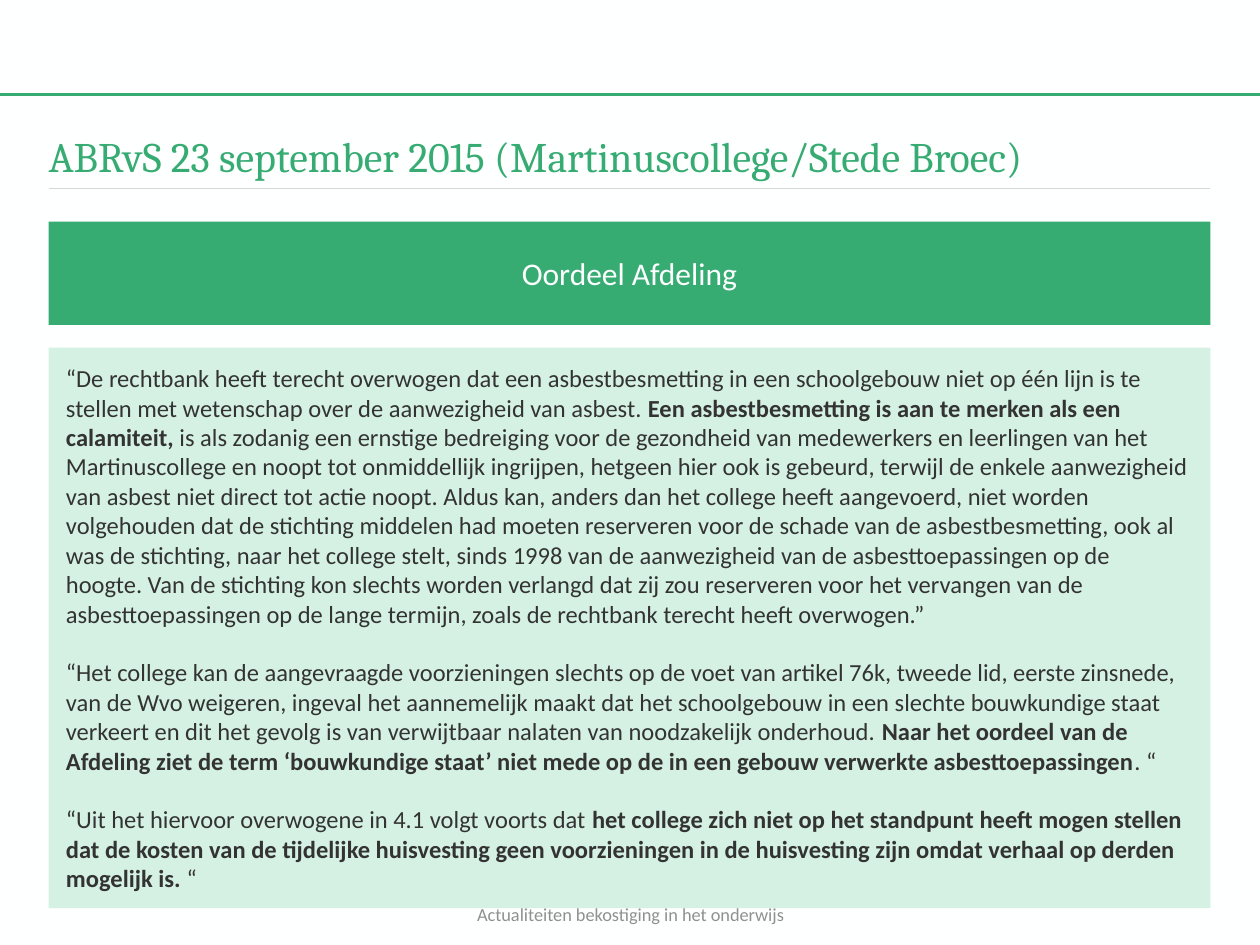
from pptx import Presentation
from pptx.dml.color import RGBColor as Rgb
from pptx.enum.shapes import MSO_CONNECTOR as Con, MSO_SHAPE as Geo
from pptx.enum.text import MSO_ANCHOR as Anc, PP_ALIGN as Al
from pptx.oxml.ns import qn
from pptx.util import Cm, Pt
from lxml.etree import SubElement as Sub

HEX = {"back": "FEFFFF", "green": "36AC73", "mint": "D4F1E3",
       "ink": "333333", "rule": "D7D5D6", "grey": "909090"}
WIDE, HIGH = 25.4, 19.05
LEFT, SPAN = 0.98, 23.42


class Deck:
    """Holds the style and the current slide."""

    def __init__(self):
        self.prs = Presentation()
        self.prs.slide_width, self.prs.slide_height = Cm(WIDE), Cm(HIGH)
        self.page = self.prs.slides.add_slide(self.prs.slide_layouts[6])
        fill = self.page.background.fill
        fill.solid()
        fill.fore_color.rgb = self.tint("back")

    def tint(self, name):
        return Rgb.from_string(HEX[name])

    def line(self, x, y, span, tone, width):
        con = self.page.shapes.add_connector(
            Con.STRAIGHT, Cm(x), Cm(y), Cm(x + span), Cm(y))
        con.line.color.rgb = self.tint(tone)
        con.line.width = Pt(width)
        Sub(con._element.spPr, qn("a:effectLst"))

    def label(self, shape, paras, size, tone, font="Calibri", align=Al.LEFT,
              anchor=Anc.MIDDLE, inset=0, lead=None):
        """Each paragraph is a list of runs; every second run is bold."""
        frame = shape.text_frame
        frame.word_wrap = True
        frame.vertical_anchor = anchor
        frame.margin_left = frame.margin_right = Cm(inset)
        frame.margin_top = frame.margin_bottom = Cm(0)
        for i, runs in enumerate(paras):
            para = frame.add_paragraph() if i else frame.paragraphs[0]
            para.alignment = align
            if lead:
                para.line_spacing = Pt(lead)
                para.space_before = Pt(lead if i else 0)
            for j, words in enumerate(runs):
                run = para.add_run()
                run.text = words
                run.font.name, run.font.size = font, Pt(size)
                run.font.bold = j % 2 == 1
                run.font.color.rgb = self.tint(tone)

    def text(self, x, y, w, h, words, size, tone, **style):
        box = self.page.shapes.add_textbox(Cm(x), Cm(y), Cm(w), Cm(h))
        self.label(box, [[words]], size, tone, **style)

    def panel(self, y, h, fill, paras, size, tone, **style):
        box = self.page.shapes.add_shape(
            Geo.RECTANGLE, Cm(LEFT), Cm(y), Cm(SPAN), Cm(h))
        box.shadow.inherit = False
        box.fill.solid()
        box.fill.fore_color.rgb = self.tint(fill)
        box.line.fill.background()
        self.label(box, paras, size, tone, **style)

    def save(self):
        self.prs.save("out.pptx")


QUOTES = [
    ["“De rechtbank heeft terecht overwogen dat een asbestbesmetting in een "
     "schoolgebouw niet op één lijn is te stellen met wetenschap over de "
     "aanwezigheid van asbest. ",
     "Een asbestbesmetting is aan te merken als een calamiteit,",
     " is als zodanig een ernstige bedreiging voor de gezondheid van "
     "medewerkers en leerlingen van het Martinuscollege en noopt tot "
     "onmiddellijk ingrijpen, hetgeen hier ook is gebeurd, terwijl de enkele "
     "aanwezigheid van asbest niet direct tot actie noopt. Aldus kan, anders "
     "dan het college heeft aangevoerd, niet worden volgehouden dat de "
     "stichting middelen had moeten reserveren voor de schade van de "
     "asbestbesmetting, ook al was de stichting, naar het college stelt, "
     "sinds 1998 van de aanwezigheid van de asbesttoepassingen op de hoogte. "
     "Van de stichting kon slechts worden verlangd dat zij zou reserveren "
     "voor het vervangen van de asbesttoepassingen op de lange termijn, "
     "zoals de rechtbank terecht heeft overwogen.”"],
    ["“Het college kan de aangevraagde voorzieningen slechts op de voet van "
     "artikel 76k, tweede lid, eerste zinsnede, van de Wvo weigeren, ingeval "
     "het aannemelijk maakt dat het schoolgebouw in een slechte bouwkundige "
     "staat verkeert en dit het gevolg is van verwijtbaar nalaten van "
     "noodzakelijk onderhoud. ",
     "Naar het oordeel van de Afdeling ziet de term ‘bouwkundige staat’ niet "
     "mede op de in een gebouw verwerkte asbesttoepassingen",
     ". “"],
    ["“Uit het hiervoor overwogene in 4.1 volgt voorts dat ",
     "het college zich niet op het standpunt heeft mogen stellen dat de "
     "kosten van de tijdelijke huisvesting geen voorzieningen in de "
     "huisvesting zijn omdat verhaal op derden mogelijk is. ",
     "“"],
]


def main():
    deck = Deck()
    # Rules and title
    deck.line(0, 1.9, WIDE, "green", 1.5)
    deck.line(LEFT, 3.8, SPAN, "rule", 1)
    deck.text(LEFT, 2.64, SPAN, 1.02,
              "ABRvS 23 september 2015 (Martinuscollege/Stede Broec)",
              24, "green", font="Cambria", anchor=Anc.TOP)
    # Heading and quotes
    deck.panel(4.47, 2.08, "green", [["Oordeel Afdeling"]], 18, "back",
               align=Al.CENTER)
    deck.panel(7.01, 11.3, "mint", QUOTES, 14, "ink", inset=0.35, lead=16.8)
    # Footer
    deck.text(8.69, 18.19, 8.05, 0.46,
              "Actualiteiten bekostiging in het onderwijs",
              10.5, "grey", align=Al.CENTER)
    deck.save()


if __name__ == "__main__":
    main()
